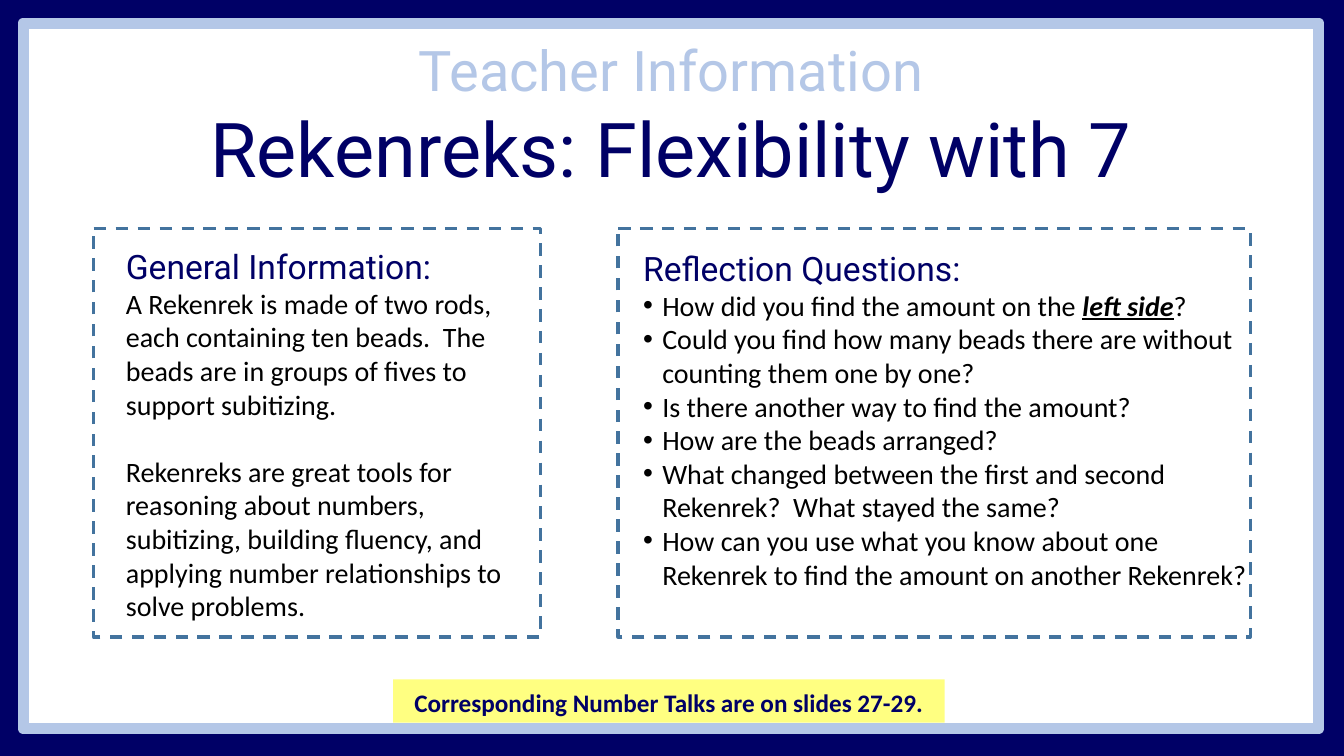
from pptx import Presentation
from pptx.dml.color import RGBColor
from pptx.enum.dml import MSO_LINE_DASH_STYLE as Dash
from pptx.enum.shapes import MSO_SHAPE as Shape
from pptx.enum.text import MSO_ANCHOR as Anchor, PP_ALIGN as Align
from pptx.util import Inches, Pt
from lxml import etree

NAVY, PALE_BLUE, STEEL, YELLOW = "000066", "B4C7E7", "43739E", "FFFF81"
WHITE, BLACK = "FFFFFF", "000000"
HEADING, BODY = "Roboto", "Calibri"
DRAWING = "{http://schemas.openxmlformats.org/drawingml/2006/main}"

GENERAL = [
    "A Rekenrek is made of two rods, each containing ten beads.  The beads are "
    "in groups of fives to support subitizing.",
    "Rekenreks are great tools for reasoning about numbers, subitizing, building "
    "fluency, and applying number relationships to solve problems.",
]
# Each question is a list of (text, emphasised) runs
QUESTIONS = [
    [("How did you find the amount on the ", False), ("left side", True), ("?", False)],
    [("Could you find how many beads there are without counting them one by one?", False)],
    [("Is there another way to find the amount?", False)],
    [("How are the beads arranged?", False)],
    [("What changed between the first and second Rekenrek?  What stayed the same?", False)],
    [("How can you use what you know about one Rekenrek to find the amount on "
      "another Rekenrek?", False)],
]


def color(value):
    return RGBColor.from_string(value)


def add_box(page, kind, box, fill=None, line=None, width=1):
    shape = page.shapes.add_shape(kind, *map(Inches, box))
    shape.shadow.inherit = False
    if fill:
        shape.fill.solid()
        shape.fill.fore_color.rgb = color(fill)
    else:
        shape.fill.background()
    if line:
        shape.line.color.rgb = color(line)
        shape.line.width = Pt(width)
    else:
        shape.line.fill.background()
    return shape


def add_text(page, box):
    frame = page.shapes.add_textbox(*map(Inches, box)).text_frame
    frame.word_wrap = True
    return frame


def next_para(frame, align=Align.LEFT):
    first = frame.paragraphs[0]
    para = frame.add_paragraph() if first.runs else first
    para.alignment = align
    return para


def add_span(para, text, size, font, ink):
    span = para.add_run()
    span.text = text
    span.font.size = Pt(size)
    span.font.name = font
    span.font.color.rgb = color(ink)
    return span


def add_bullet(para, indent=0.19):
    props = para._p.get_or_add_pPr()
    props.set("marL", str(Inches(indent)))
    props.set("indent", str(-Inches(indent)))
    etree.SubElement(props, DRAWING + "buFont").set("typeface", "Arial")
    etree.SubElement(props, DRAWING + "buChar").set("char", "•")


def draw_frame(page, box):
    add_box(page, Shape.RECTANGLE, box, WHITE, PALE_BLUE, 8)


def draw_title(page, box):
    frame = add_text(page, box)
    for text, size, ink in [("Teacher Information", 40, PALE_BLUE),
                            ("Rekenreks: Flexibility with 7", 54, NAVY)]:
        add_span(next_para(frame, Align.CENTER), text, size, HEADING, ink)


def draw_panel(page, box, heading, inset, text_width):
    """Dashed panel with a heading; returns its text frame."""
    left, top, _, height = box
    panel = add_box(page, Shape.ROUNDED_RECTANGLE, box, line=STEEL, width=2.25)
    panel.adjustments[0] = 0
    panel.line.dash_style = Dash.DASH
    dx, dy = inset
    frame = add_text(page, (left + dx, top + dy, text_width, height - dy))
    add_span(next_para(frame), heading, 24, HEADING, NAVY)
    return frame


def draw_general(page, box):
    frame = draw_panel(page, box, "General Information:", (0.22, 0.12), 4.2)
    for index, text in enumerate(GENERAL):
        para = next_para(frame)
        para.space_before = Pt(24 * index)
        add_span(para, text, 20, BODY, BLACK)


def draw_questions(page, box):
    frame = draw_panel(page, box, "Reflection Questions:", (0.15, 0.14), 6.19)
    for question in QUESTIONS:
        para = next_para(frame)
        add_bullet(para)
        for text, strong in question:
            font = add_span(para, text, 20, BODY, BLACK).font
            font.bold = font.italic = font.underline = strong


def draw_note(page, box):
    frame = add_box(page, Shape.RECTANGLE, box, YELLOW).text_frame
    frame.vertical_anchor = Anchor.BOTTOM
    para = next_para(frame, Align.CENTER)
    span = add_span(para, "Corresponding Number Talks are on slides 27-29.", 18, BODY, NAVY)
    span.font.bold = True


def main():
    deck = Presentation()
    deck.slide_width, deck.slide_height = Inches(13.33), Inches(7.5)
    page = deck.slides.add_slide(deck.slide_layouts[6])
    page.background.fill.solid()
    page.background.fill.fore_color.rgb = color(NAVY)

    draw_frame(page, (0.23, 0.23, 12.85, 7))
    draw_title(page, (0.23, 0.3, 12.85, 1.68))
    draw_general(page, (0.93, 2.27, 4.43, 4.05))
    draw_questions(page, (6.13, 2.27, 6.27, 4.05))
    draw_note(page, (3.9, 6.74, 5.47, 0.43))
    deck.save("out.pptx")


if __name__ == "__main__":
    main()
